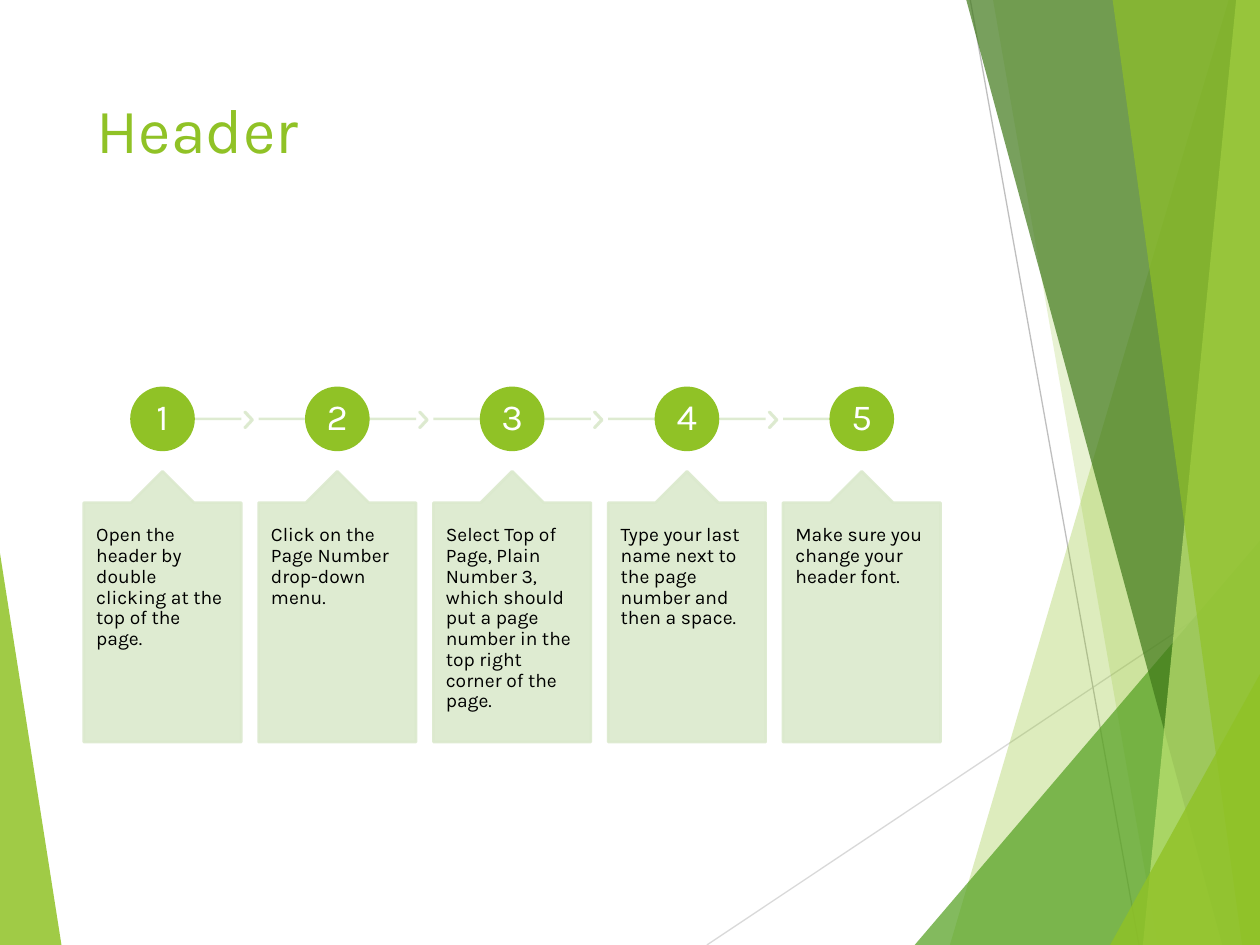
import pptx
import pptx.dml.color
import pptx.enum.shapes
import pptx.enum.text
import pptx.oxml
import pptx.oxml.ns
import pptx.util

Cm, Pt = pptx.util.Cm, pptx.util.Pt
RGBColor = pptx.dml.color.RGBColor
SHAPE = pptx.enum.shapes.MSO_SHAPE
ALIGN = pptx.enum.text.PP_ALIGN
ANCHOR = pptx.enum.text.MSO_ANCHOR
qn = pptx.oxml.ns.qn

GREEN = RGBColor(0x90, 0xC2, 0x26)
LEAF = RGBColor(0x54, 0xA0, 0x21)
FOREST = RGBColor(0x3F, 0x78, 0x19)
LIME = RGBColor(0xC0, 0xE4, 0x74)
PALE = RGBColor(0xDB, 0xE9, 0xCD)
LIGHT_GREY = RGBColor(0xD9, 0xD9, 0xD9)
GREY = RGBColor(0xBF, 0xBF, 0xBF)
WHITE = RGBColor(0xFF, 0xFF, 0xFF)
BLACK = RGBColor(0, 0, 0)

FONT = "Karla"
SLIDE_W, SLIDE_H = 25.4, 19.05

STEPS = [
    "Open the header by double clicking at the top of the page.",
    "Click on the Page Number drop-down menu.",
    "Select Top of Page, Plain Number 3, which should put a page number "
    "in the top right corner of the page.",
    "Type your last name next to the page number and then a space.",
    "Make sure you change your header font.",
]

# Each facet reaches the right edge: top x, top y, foot x, colour, opacity
FACETS = [
    (10.52, 0, 4.9, GREEN, 30),
    (5.77, 0, 9.09, GREEN, 20),
    (11.15, 10.9, 4.19, LEAF, 72),
    (5.23, 0, 10.39, FOREST, 70),
    (10.67, 0, 8.79, LIME, 70),
    (8.18, 0, 10.79, GREEN, 65),
    (11.15, 13.59, 8.13, GREEN, 80),
]


def set_opacity(part, percent):
    for color in part.element.spPr.iter(qn("a:srgbClr")):
        alpha = color.makeelement(qn("a:alpha"), {"val": str(percent * 1000)})
        color.append(alpha)


def paint(shape, color, opacity=100, outline=True):
    shape.shadow.inherit = False
    shape.fill.solid()
    shape.fill.fore_color.rgb = color
    if outline:
        shape.line.color.rgb = color
        shape.line.width = Pt(1.5)
    else:
        shape.line.fill.background()
    if opacity < 100:
        set_opacity(shape, opacity)


def write_text(shape, text, size, color, align=ALIGN.LEFT, anchor=ANCHOR.TOP,
               margins=(0.25, 0.13), line_spacing=None):
    frame = shape.text_frame
    frame.word_wrap = True
    frame.auto_size = pptx.enum.text.MSO_AUTO_SIZE.NONE
    frame.vertical_anchor = anchor
    frame.margin_left = frame.margin_right = Cm(margins[0])
    frame.margin_top = frame.margin_bottom = Cm(margins[1])
    paragraph = frame.paragraphs[0]
    paragraph.alignment = align
    paragraph.line_spacing = line_spacing
    run = paragraph.add_run()
    run.text = text
    run.font.name = FONT
    run.font.size = Pt(size)
    run.font.color.rgb = color


def add_line(shapes, start, end, color, width, opacity=100):
    line = shapes.add_connector(
        pptx.enum.shapes.MSO_CONNECTOR.STRAIGHT,
        Cm(start[0]), Cm(start[1]), Cm(end[0]), Cm(end[1]))
    line.line.color.rgb = color
    line.line.width = Pt(width)
    properties = line.element.spPr
    properties.append(properties.makeelement(qn("a:effectLst"), {}))
    if opacity < 100:
        set_opacity(line, opacity)


def add_polygon(shapes, points, color, opacity):
    corners = [(Cm(x), Cm(y)) for x, y in points]
    builder = shapes.build_freeform(*corners[0])
    builder.add_line_segments(corners[1:], close=True)
    paint(builder.convert_to_shape(), color, opacity, outline=False)


def add_left_sliver(shapes, left, top, width, height):
    bottom = top + height
    add_polygon(shapes, [(left, top), (left + width, bottom), (left, bottom)],
                GREEN, 85)


def add_right_facets(shapes, left, top, width, height):
    right, bottom = left + width, top + height
    # Thin crossing lines
    add_line(shapes, (left, bottom), (right, top + 11.61), LIGHT_GREY, 0.75)
    add_line(shapes, (left + 5.31, top), (left + 8.71, bottom), GREY, 0.75)
    # Translucent facets
    for top_x, top_y, foot_x, color, opacity in FACETS:
        points = [(left + top_x, top + top_y), (left + foot_x, bottom),
                  (right, bottom), (right, top + top_y)]
        add_polygon(shapes, points, color, opacity)


def add_title(slide, text, left, top, width, height):
    title = slide.shapes.title
    title.left, title.top = Cm(left), Cm(top)
    title.width, title.height = Cm(width), Cm(height)
    write_text(title, text, size=36, color=GREEN)


def add_step(shapes, number, text, left, top, width, height, first, last):
    badge_size, card_top = 1.25, top + 1.68
    center, right = left + width / 2, left + width
    line_y = top + badge_size / 2

    # Track and chevron to the next step
    add_line(shapes, (center if first else left, line_y),
             (center if last else right, line_y), PALE, 1.5, opacity=90)
    if not last:
        chevron = shapes.add_shape(SHAPE.CHEVRON, Cm(right + 0.07),
                                   Cm(top + 0.49), Cm(0.16), Cm(0.31))
        chevron.adjustments[0] = 0.9
        paint(chevron, PALE, 90)

    # Numbered badge
    badge = shapes.add_shape(SHAPE.OVAL, Cm(center - badge_size / 2), Cm(top),
                             Cm(badge_size), Cm(badge_size))
    paint(badge, GREEN)
    write_text(badge, str(number), size=21, color=WHITE, align=ALIGN.CENTER,
               anchor=ANCHOR.MIDDLE, margins=(0.05, 0.05), line_spacing=0.9)

    # Instruction card
    card = shapes.add_shape(SHAPE.UP_ARROW_CALLOUT, Cm(left), Cm(card_top),
                            Cm(width), Cm(top + height - card_top))
    for index, value in enumerate((0.5, 0.2, 0.2, 1)):
        card.adjustments[index] = value
    paint(card, PALE, 90)
    write_text(card, text, size=11, color=BLACK, margins=(0.25, 0.45),
               line_spacing=0.9)


def add_process(shapes, left, top, width, height):
    gap = 0.35
    step_width = (width - gap * (len(STEPS) - 1)) / len(STEPS)
    for index, text in enumerate(STEPS):
        add_step(shapes, index + 1, text, left + index * (step_width + gap),
                 top, step_width, height, first=index == 0,
                 last=index == len(STEPS) - 1)


def main():
    presentation = pptx.Presentation()
    presentation.slide_width = Cm(SLIDE_W)
    presentation.slide_height = Cm(SLIDE_H)
    slide = presentation.slides.add_slide(presentation.slide_layouts[5])

    add_left_sliver(slide.shapes, 0, 11.15, 1.24, 7.9)
    add_right_facets(slide.shapes, 14.25, 0, 11.15, SLIDE_H)
    add_title(slide, "Header", 1.7, 1.7, 17.63, 3.66)
    add_process(slide.shapes, 1.69, 7.82, 17.27, 7.14)

    presentation.save("out.pptx")


if __name__ == "__main__":
    main()
